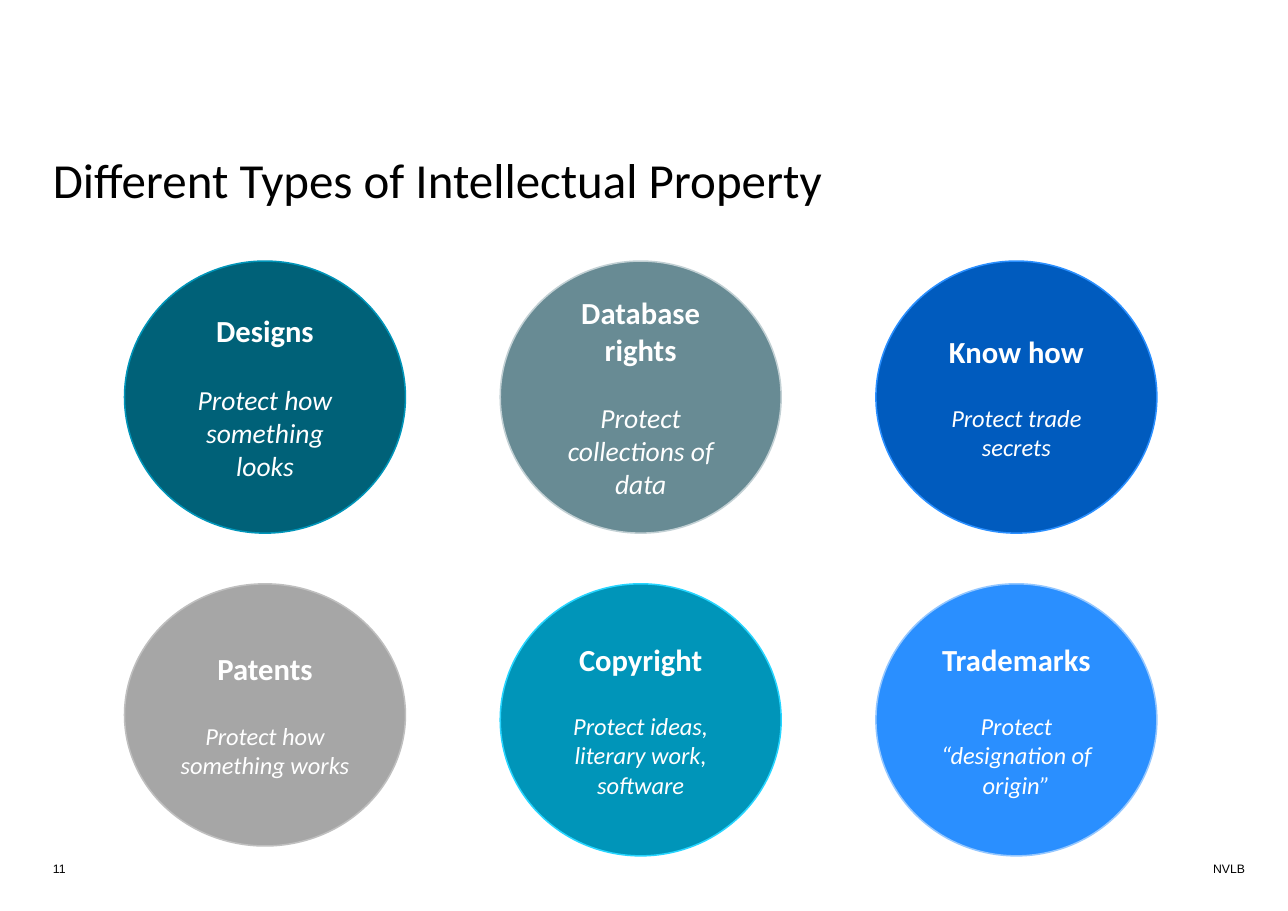
"""Build a slide showing six types of intellectual property as circles."""
import pptx
import pptx.util
import pptx.dml.color
import pptx.enum.shapes
import pptx.enum.text

RGBColor = pptx.dml.color.RGBColor
PP_ALIGN = pptx.enum.text.PP_ALIGN
MSO_ANCHOR = pptx.enum.text.MSO_ANCHOR

BLACK = RGBColor(0x00, 0x00, 0x00)
WHITE = RGBColor(0xFF, 0xFF, 0xFF)
DARK_TEAL = RGBColor(0x00, 0x61, 0x78)
TEAL = RGBColor(0x00, 0x95, 0xB9)
CYAN = RGBColor(0x26, 0xD5, 0xFF)
SLATE = RGBColor(0x68, 0x8B, 0x94)
PALE_SLATE = RGBColor(0xC2, 0xD0, 0xD4)
DARK_BLUE = RGBColor(0x00, 0x5B, 0xBE)
BLUE = RGBColor(0x2A, 0x8F, 0xFF)
PALE_BLUE = RGBColor(0x94, 0xC7, 0xFF)
GREY = RGBColor(0xA6, 0xA6, 0xA6)
PALE_GREY = RGBColor(0xBF, 0xBF, 0xBF)

PX = 9144
LEFT, COLUMN_STEP, WIDTH = 113, 341, 255
ROW_TOPS = (237, 530)

IP_TYPES = [
    [
        (["Designs"], "Protect how something looks", 18, 247, DARK_TEAL, TEAL),
        (["Database", "rights"], "Protect collections of data", 18, 247, SLATE, PALE_SLATE),
        (["Know how"], "Protect trade secrets", 16, 247, DARK_BLUE, BLUE),
    ],
    [
        (["Patents"], "Protect how something works", 16, 238, GREY, PALE_GREY),
        (["Copyright"], "Protect ideas, literary work, software", 16, 247, TEAL, CYAN),
        (["Trademarks"], "Protect “designation of origin”", 16, 247, BLUE, PALE_BLUE),
    ],
]


def box(*lengths):
    return [length * PX for length in lengths]


def set_font(p, name, size, color, bold=False, italic=False):
    p.font.name = name
    p.font.size = pptx.util.Pt(size)
    p.font.color.rgb = color
    p.font.bold = bold
    p.font.italic = italic


def set_frame(tf, anchor):
    tf.margin_left = tf.margin_top = tf.margin_right = tf.margin_bottom = 0
    tf.word_wrap = True
    tf.auto_size = pptx.enum.text.MSO_AUTO_SIZE.NONE
    tf.vertical_anchor = anchor


def add_title(s, text):
    sp = s.shapes.title
    sp.left, sp.top, sp.width, sp.height = box(48, 142, 1040, 95)
    tf = sp.text_frame
    set_frame(tf, MSO_ANCHOR.TOP)
    tf.text = text
    p = tf.paragraphs[0]
    p.alignment = PP_ALIGN.LEFT
    p.line_spacing = 0.9
    set_font(p, "Calibri", 32, BLACK)


def add_footer(s, text, left, width):
    tf = s.shapes.add_textbox(*box(left, 777, width, 23)).text_frame
    set_frame(tf, MSO_ANCHOR.MIDDLE)
    tf.text = text
    set_font(tf.paragraphs[0], "Arial", 8, BLACK)


def add_circle(s, left, top, heading, purpose, size, height, fill, line):
    sp = s.shapes.add_shape(pptx.enum.shapes.MSO_SHAPE.OVAL, *box(left, top, WIDTH, height))
    sp.shadow.inherit = False
    sp.fill.solid()
    sp.fill.fore_color.rgb = fill
    sp.line.color.rgb = line
    sp.line.width = pptx.util.Pt(1)
    tf = sp.text_frame
    tf.word_wrap = True
    tf.vertical_anchor = MSO_ANCHOR.MIDDLE
    tf.text = "\n".join([*heading, purpose])
    for p in tf.paragraphs:
        p.alignment = PP_ALIGN.CENTER
        set_font(p, "Calibri", 20, WHITE, bold=True)
    set_font(p, "Calibri", size, WHITE, italic=True)
    p.space_before = pptx.util.Pt(22)


def main():
    prs = pptx.Presentation()
    prs.slide_width, prs.slide_height = box(1169, 827)
    s = prs.slides.add_slide(prs.slide_layouts.get_by_name("Title Only"))
    add_title(s, "Different Types of Intellectual Property")
    for top, row in zip(ROW_TOPS, IP_TYPES):
        for column, ip_type in enumerate(row):
            add_circle(s, LEFT + column * COLUMN_STEP, top, *ip_type)
    add_footer(s, "11", 48, 135)
    add_footer(s, "NVLB", 1101, 51)
    prs.save("out.pptx")


if __name__ == "__main__":
    main()
